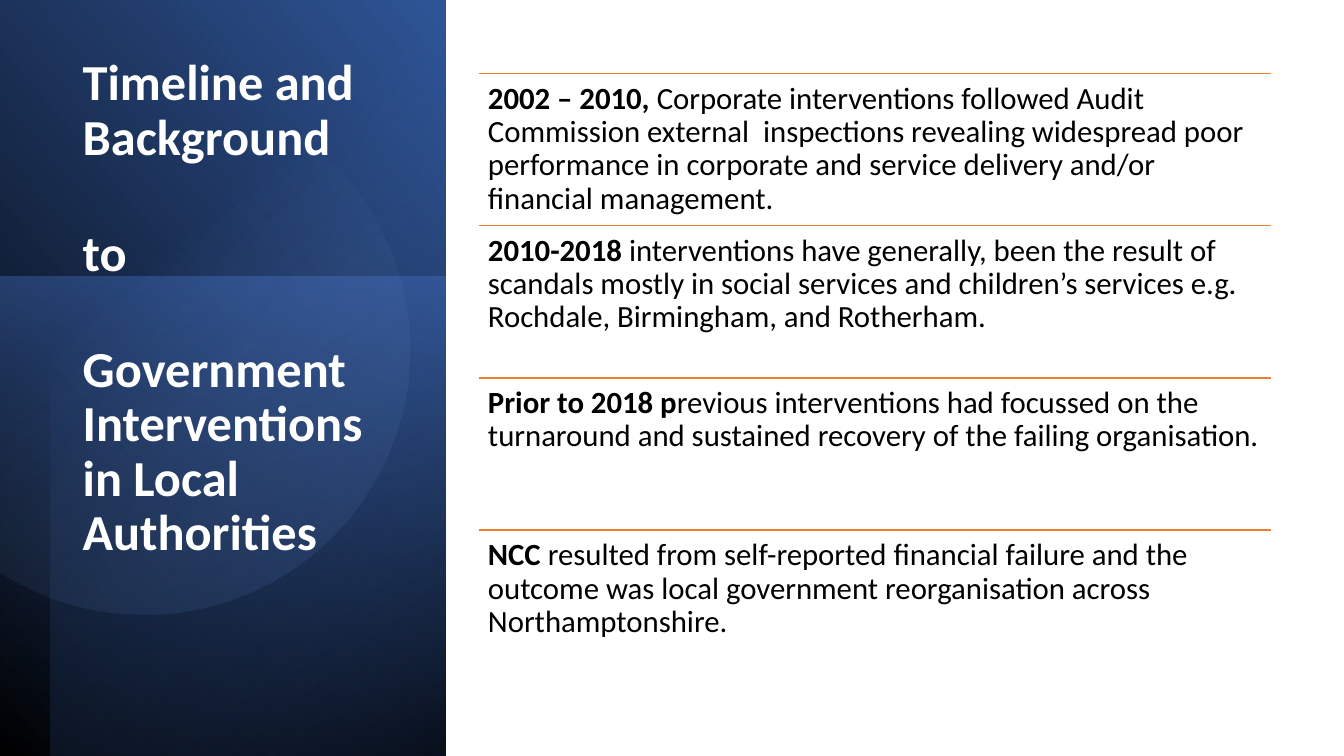
from dataclasses import dataclass
from math import acos, cos, degrees, radians, sin

from lxml import etree
from pptx import Presentation
from pptx.dml.color import RGBColor
from pptx.enum.shapes import MSO_CONNECTOR, MSO_SHAPE
from pptx.enum.text import MSO_ANCHOR, MSO_AUTO_SIZE, PP_ALIGN
from pptx.oxml.ns import qn
from pptx.util import Inches, Pt

RECTANGLE = MSO_SHAPE.RECTANGLE
STRAIGHT = MSO_CONNECTOR.STRAIGHT
TOP = MSO_ANCHOR.TOP
LEFT = PP_ALIGN.LEFT
NO_AUTOFIT = MSO_AUTO_SIZE.NONE

FONT = "Calibri"
COLORS = {
    "black": "000000",
    "white": "FFFFFF",
    "blue": "4472C4",
    "mid_blue": "2F5597",
    "dark_blue": "203864",
    "light_blue": "8FAADC",
    "orange": "ED7D31",
}


@dataclass
class Stop:
    position: int
    color: str
    opacity: int = 100


@dataclass
class Panel:
    left: float
    top: float
    width: float
    height: float
    rotation: float
    flipped: bool
    angle: int
    stops: list[Stop]


@dataclass
class Period:
    lead: str
    detail: str


PANELS = [
    Panel(-1.55, 1.55, 7.52, 4.42, 90, True, 310,
          [Stop(0, "black"), Stop(100, "mid_blue")]),
    Panel(-0.17, 2.91, 4.76, 4.42, 270, False, 190,
          [Stop(0, "blue", 50), Stop(100, "dark_blue", 0)]),
    Panel(-1.29, 1.79, 7.5, 3.92, 270, True, 220,
          [Stop(0, "black", 59), Stop(69, "blue", 0)]),
]
DISC_STOPS = [Stop(39, "light_blue", 0), Stop(100, "mid_blue", 26)]

TITLE_PARTS = [
    "Timeline and Background",
    "to",
    "Government Interventions in Local Authorities",
]
PERIODS = [
    Period("2002 – 2010, ",
           "Corporate interventions followed Audit Commission external  inspections "
           "revealing widespread poor performance in corporate and service delivery "
           "and/or financial management."),
    Period("2010-2018 ",
           "interventions have generally, been the result of scandals mostly in social "
           "services and children’s services e.g. Rochdale, Birmingham, and Rotherham."),
    Period("Prior to 2018 p",
           "revious interventions had focussed on the turnaround and sustained recovery "
           "of the failing organisation."),
    Period("NCC ",
           "resulted from self-reported financial failure and the outcome was local "
           "government reorganisation across Northamptonshire."),
]
LIST_LEFT, LIST_TOP, LIST_WIDTH, ROW_HEIGHT = 4.75, 0.73, 7.86, 1.51


def fill_gradient(shape, stops: list[Stop], angle: int) -> None:
    shape.shadow.inherit = False
    shape.line.fill.background()
    shape.fill.background()
    gradient = etree.Element(qn("a:gradFill"), rotWithShape="1")
    stop_list = etree.SubElement(gradient, qn("a:gsLst"))
    for stop in stops:
        entry = etree.SubElement(stop_list, qn("a:gs"), pos=str(stop.position * 1000))
        color = etree.SubElement(entry, qn("a:srgbClr"), val=COLORS[stop.color])
        if stop.opacity < 100:
            etree.SubElement(color, qn("a:alpha"), val=str(stop.opacity * 1000))
    etree.SubElement(gradient, qn("a:lin"), ang=str(angle * 60000), scaled="0")
    properties = shape.element.spPr
    properties.replace(properties.find(qn("a:noFill")), gradient)


def add_panel(slide, panel: Panel) -> None:
    shape = slide.shapes.add_shape(
        RECTANGLE, Inches(panel.left), Inches(panel.top),
        Inches(panel.width), Inches(panel.height))
    shape.rotation = panel.rotation
    if panel.flipped:
        shape.element.spPr.get_or_add_xfrm().set("flipH", "1")
    fill_gradient(shape, panel.stops, panel.angle)


def add_disc(slide) -> None:
    """Draw a disc that is cut off along the left edge of the slide."""
    center_x, center_y, radius, rotation = 1.81, 3.94, 2.63, 101.6
    half_sweep = degrees(acos(-1.43 / radius))
    steps = 120
    points = []
    for step in range(steps + 1):
        angle = radians(half_sweep * (2 * step / steps - 1) - rotation)
        points.append((Inches(center_x + radius * cos(angle)),
                       Inches(center_y + radius * sin(angle))))
    builder = slide.shapes.build_freeform(*points[0])
    builder.add_line_segments(points[1:], close=True)
    disc = builder.convert_to_shape()
    disc.rotation = rotation
    fill_gradient(disc, DISC_STOPS, 310)


def add_run(paragraph, text: str, *, size: int, color: str, bold: bool = False) -> None:
    run = paragraph.add_run()
    run.text = text
    run.font.name = FONT
    run.font.size = Pt(size)
    run.font.bold = bold
    run.font.color.rgb = RGBColor.from_string(COLORS[color])


def set_frame(frame, inset: float) -> None:
    frame.word_wrap = True
    frame.auto_size = NO_AUTOFIT
    frame.vertical_anchor = TOP
    frame.margin_left = frame.margin_right = Inches(inset)


def write_title(slide) -> None:
    title = slide.shapes.title
    title.left, title.top = Inches(0.72), Inches(0.52)
    title.width, title.height = Inches(3.15), Inches(5.86)
    set_frame(title.text_frame, 0.1)
    for index, part in enumerate(TITLE_PARTS):
        frame = title.text_frame
        paragraph = frame.add_paragraph() if index else frame.paragraphs[0]
        paragraph.alignment = LEFT
        paragraph.line_spacing = 0.9
        paragraph.space_before = Pt(44 if index else 0)
        add_run(paragraph, part, size=36, color="white", bold=True)
    # Bring the title in front of the panels
    slide.shapes.element.append(title.element)


def add_period(slide, period: Period, top: float) -> None:
    rule = slide.shapes.add_connector(
        STRAIGHT, Inches(LIST_LEFT), Inches(top),
        Inches(LIST_LEFT + LIST_WIDTH), Inches(top))
    rule.line.color.rgb = RGBColor.from_string(COLORS["orange"])
    rule.line.width = Pt(1)
    etree.SubElement(rule.element.spPr, qn("a:effectLst"))

    entry = slide.shapes.add_textbox(
        Inches(LIST_LEFT), Inches(top), Inches(LIST_WIDTH), Inches(ROW_HEIGHT))
    frame = entry.text_frame
    set_frame(frame, 0.09)
    frame.margin_top = frame.margin_bottom = Inches(0.09)
    paragraph = frame.paragraphs[0]
    paragraph.line_spacing = 0.9
    add_run(paragraph, period.lead, size=22, color="black", bold=True)
    add_run(paragraph, period.detail, size=22, color="black")


def main() -> None:
    deck = Presentation()
    deck.slide_width, deck.slide_height = Inches(13.33), Inches(7.5)
    slide = deck.slides.add_slide(deck.slide_layouts[5])

    # Blue side panel with its title
    for panel in PANELS:
        add_panel(slide, panel)
    add_disc(slide)
    write_title(slide)

    # Timeline entries, each under a rule
    for row, period in enumerate(PERIODS):
        add_period(slide, period, LIST_TOP + row * ROW_HEIGHT)

    deck.save("out.pptx")


if __name__ == "__main__":
    main()
